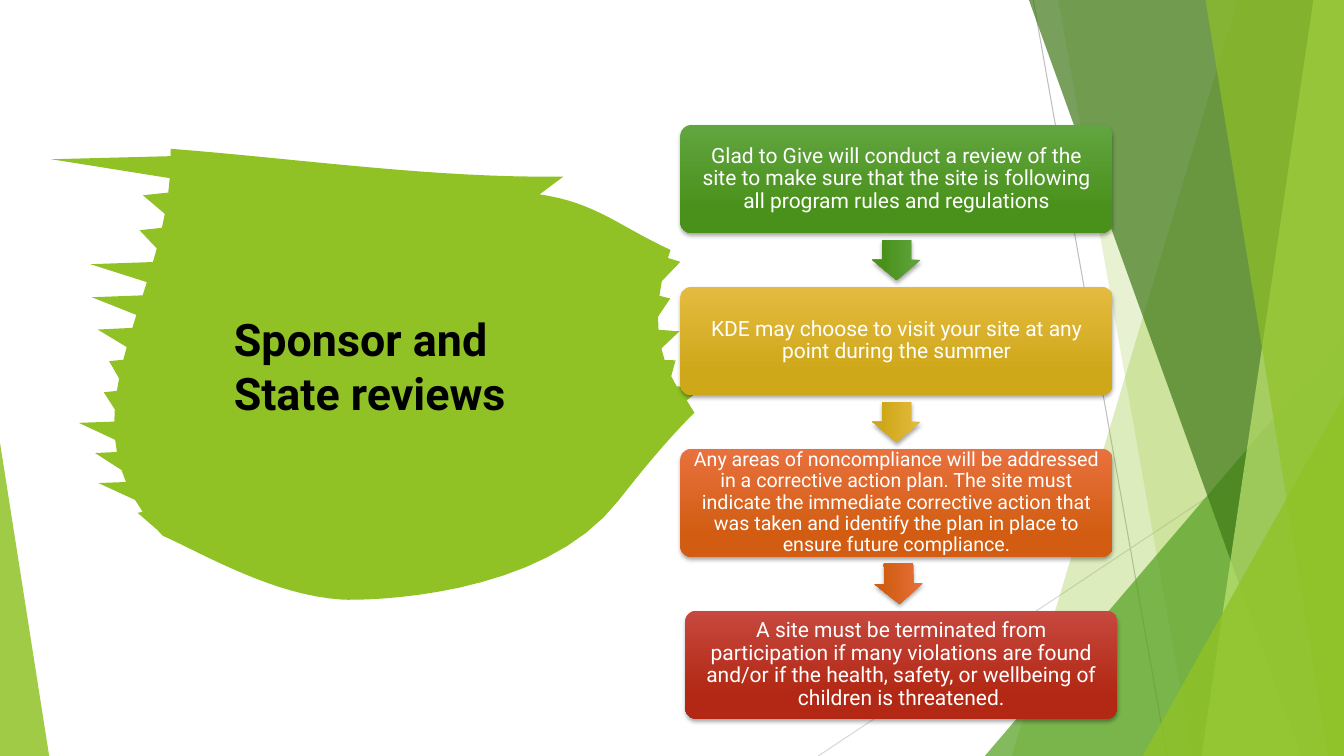
"""Build the slide on sponsor and state reviews."""
from dataclasses import dataclass
from typing import Any

import lxml.etree
import pptx
import pptx.dml.color
import pptx.enum.shapes
import pptx.enum.text
import pptx.oxml.ns
import pptx.util

Cm, Pt = pptx.util.Cm, pptx.util.Pt
RGB = pptx.dml.color.RGBColor
SHAPE = pptx.enum.shapes.MSO_SHAPE
ALIGN = pptx.enum.text.PP_ALIGN
MIDDLE = pptx.enum.text.MSO_ANCHOR.MIDDLE
qn = pptx.oxml.ns.qn
Point = tuple[float, float]

WHITE, BLACK = RGB(255, 255, 255), RGB(0, 0, 0)
LIME, PALE_LIME = RGB(0x90, 0xC2, 0x26), RGB(0xBF, 0xE4, 0x71)
GREEN, DARK_GREEN = RGB(0x54, 0xA0, 0x21), RGB(0x3F, 0x78, 0x18)
GREY, LIGHT_GREY = RGB(0xBF, 0xBF, 0xBF), RGB(0xD8, 0xD8, 0xD8)

WIDTH, HEIGHT = 33.87, 19.05
CARD_LEFT, CARD_TOP, CARD_W, CARD_H, PITCH = 17.15, 3.15, 10.89, 2.72, 4.08
ARROW_W, ARROW_H = 1.02, 1.22
MARGINS = {f"margin_{side}": Cm(0.23) for side in ("left", "right", "top", "bottom")}


@dataclass
class Ray:
    start: Point
    end: Point
    color: RGB


@dataclass
class Band:
    top_x: float
    bottom_x: float
    color: RGB
    opacity: int


@dataclass
class Wedge:
    left: float
    top: float
    width: float
    apex: int
    color: RGB
    opacity: int


@dataclass
class Edge:
    start: Point
    pull_out: Point
    pull_in: Point
    end: Point
    bristles: tuple[float, ...] = ()


@dataclass
class Step:
    text: str
    light: RGB
    dark: RGB
    size: int = 15
    shift: float = 0
    arrow_shift: float = 0
    turn: float = 90


RAYS = [Ray((26.04, 0), (29.41, HEIGHT), GREY), Ray((WIDTH, 10.24), (20.62, HEIGHT), LIGHT_GREY)]
BACKDROP = [
    Band(31.19, 25.5, LIME, 30),
    Band(26.67, 30.05, LIME, 20),
    Wedge(24.82, 8.46, 9.05, 1, GREEN, 72),
    Band(25.93, 32.79, DARK_GREEN, 70),
    Band(33.1, 30.28, PALE_LIME, 70),
    Band(30.38, 33.48, LIME, 65),
    Wedge(28.8, 9.98, 5.07, 1, LIME, 80),
    Wedge(0, 11.15, 1.24, 0, LIME, 85),
]
TOP = Edge((4.3, 3.75), (7.5, 4), (11, 4.5), (14.2, 4.45))
SHOULDER = Edge((13.6, 4.9), (15, 5.1), (15.6, 5.7), (16.9, 6.3))
RIGHT = Edge((16.9, 6.3), (16.3, 8), (16.6, 9.3), (17.4, 10.2), (0.4, 0.3, 0.5, 0.2, 0.6))
FLANK = Edge((17.5, 10.4), (16.9, 11), (16.3, 11.7), (15.6, 12.6))
BOTTOM = Edge((15.6, 12.6), (13.67, 15.11), (9.14, 15.14), (8.61, 15.11))
HEEL = Edge((8.61, 15.11), (6.9, 15), (5.2, 14), (4.1, 13.5))
LEFT = Edge((4.1, 13.5), (1.2, 10.5), (4.4, 7.5), (4.3, 3.75),
            (-0.3, -0.8, -0.6, -0.9, -0.3, -0.3, -0.8, -1.2, -1.5, -0.5, -0.6, -3))
BRUSH = [TOP, SHOULDER, RIGHT, FLANK, BOTTOM, HEEL, LEFT]
BRISTLE_RISE, SMOOTH_STEPS = 0.2, 16

STEPS = [
    Step("Glad to Give will conduct a review of the site to make sure that the site is "
         "following all program rules and regulations",
         RGB(0x61, 0xA5, 0x40), RGB(0x4A, 0x91, 0x1B)),
    Step("KDE may choose to visit your site at any point during the summer",
         RGB(0xE4, 0xBB, 0x40), RGB(0xCF, 0xA8, 0x1A)),
    Step("Any areas of noncompliance will be addressed in a corrective action plan. The site "
         "must indicate the immediate corrective action that was taken and identify the plan "
         "in place to ensure future compliance.",
         RGB(0xE8, 0x71, 0x3E), RGB(0xD2, 0x5D, 0x12), size=14, arrow_shift=0.06, turn=88.5),
    Step("A site must be terminated from participation if many violations are found and/or "
         "if the health, safety, or wellbeing of children is threatened.",
         RGB(0xC6, 0x48, 0x3E), RGB(0xB2, 0x28, 0x14), shift=0.12),
]


def set_attrs(obj: Any, values: dict[str, Any]) -> None:
    for name, value in values.items():
        setattr(obj, name, value)


def point_on(edge: Edge, t: float) -> Point:
    weights = ((1 - t) ** 3, 3 * t * (1 - t) ** 2, 3 * t * t * (1 - t), t ** 3)
    knots = (edge.start, edge.pull_out, edge.pull_in, edge.end)
    x, y = (sum(w * k[axis] for w, k in zip(weights, knots)) for axis in (0, 1))
    return x, y


def trace(edge: Edge) -> list[Point]:
    if not edge.bristles:
        return [point_on(edge, i / SMOOTH_STEPS) for i in range(SMOOTH_STEPS + 1)]
    points = []
    for i, reach in enumerate(edge.bristles):
        before, middle, after = (point_on(edge, (i + part) / len(edge.bristles))
                                 for part in (0.2, 0.5, 0.8))
        points += [before, (middle[0] + reach, middle[1] - BRISTLE_RISE), after]
    return points


def add_polygon(s: Any, points: list[Point], color: RGB, opacity: int = 100) -> Any:
    start, *rest = [(Cm(x), Cm(y)) for x, y in points]
    builder = s.shapes.build_freeform(*start)
    builder.add_line_segments(rest)
    sp = builder.convert_to_shape()
    paint(sp, color, opacity)
    return sp


def paint(sp: Any, color: RGB, opacity: int) -> None:
    sp.shadow.inherit = False
    sp.line.fill.background()
    sp.fill.solid()
    sp.fill.fore_color.rgb = color
    if opacity < 100:
        clr = sp.element.spPr.find(".//" + qn("a:srgbClr"))
        lxml.etree.SubElement(clr, qn("a:alpha"), val=str(opacity * 1000))


def add_ray(s: Any, ray: Ray) -> None:
    cxn = s.shapes.add_connector(pptx.enum.shapes.MSO_CONNECTOR.STRAIGHT,
                                 *map(Cm, ray.start + ray.end))
    cxn.line.color.rgb = ray.color
    cxn.line.width = Pt(0.75)
    lxml.etree.SubElement(cxn.element.spPr, qn("a:effectLst"))


def add_backdrop(s: Any, part: Band | Wedge) -> None:
    if isinstance(part, Band):
        corners = [(part.top_x, 0), (WIDTH, 0), (WIDTH, HEIGHT), (part.bottom_x, HEIGHT)]
        add_polygon(s, corners, part.color, part.opacity)
    else:
        box = (part.left, part.top, part.width, HEIGHT - part.top)
        sp = s.shapes.add_shape(SHAPE.ISOSCELES_TRIANGLE, *map(Cm, box))
        sp.adjustments[0] = part.apex
        paint(sp, part.color, part.opacity)


def add_glossy(s: Any, kind: Any, box: tuple[float, ...], step: Step) -> Any:
    sp = s.shapes.add_shape(kind, *map(Cm, box))
    sp.line.fill.background()
    sp.fill.gradient()
    sp.fill.gradient_angle = 270
    for stop, color, position in zip(sp.fill.gradient_stops, (step.light, step.dark), (0, 0.78)):
        stop.color.rgb = color
        stop.position = position
    sp.shadow.inherit = False
    shadow = lxml.etree.SubElement(
        sp.element.spPr.find(qn("a:effectLst")), qn("a:outerShdw"), blurRad=str(Pt(3)),
        dist=str(Pt(2)), dir="5400000", algn="ctr", rotWithShape="0")
    clr = lxml.etree.SubElement(shadow, qn("a:srgbClr"), val=str(BLACK))
    lxml.etree.SubElement(clr, qn("a:alpha"), val="35000")
    return sp


def write(tf: Any, text: str, para: dict[str, Any], font: dict[str, Any], color: RGB) -> None:
    set_attrs(tf, {"text": text, "word_wrap": True, "vertical_anchor": MIDDLE})
    p = tf.paragraphs[0]
    set_attrs(p, para)
    set_attrs(p.runs[0].font, {"name": "Roboto"} | font)
    p.runs[0].font.color.rgb = color


def add_step(s: Any, index: int, step: Step) -> None:
    top = CARD_TOP + index * PITCH
    sp = add_glossy(s, SHAPE.ROUNDED_RECTANGLE, (CARD_LEFT + step.shift, top, CARD_W, CARD_H), step)
    sp.adjustments[0] = 0.1
    set_attrs(sp.text_frame, MARGINS)
    write(sp.text_frame, step.text, {"alignment": ALIGN.CENTER, "line_spacing": 0.9},
          {"size": Pt(step.size)}, WHITE)
    if index < len(STEPS) - 1:
        x = CARD_LEFT + (CARD_W - ARROW_W) / 2 + step.arrow_shift
        y = top + (CARD_H + PITCH - ARROW_H) / 2
        arrow = add_glossy(s, SHAPE.RIGHT_ARROW, (x, y, ARROW_W, ARROW_H), step)
        arrow.rotation = step.turn
        arrow.adjustments[0] = 0.6


prs = pptx.Presentation()
set_attrs(prs, {"slide_width": Cm(WIDTH), "slide_height": Cm(HEIGHT)})
s = prs.slides.add_slide(prs.slide_layouts[5])
for ray in RAYS:
    add_ray(s, ray)
for part in BACKDROP:
    add_backdrop(s, part)
brush = add_polygon(s, [point for edge in BRUSH for point in trace(edge)], LIME)
title = s.shapes.title
set_attrs(title, {"left": Cm(5.64), "top": Cm(5.33), "width": Cm(7.72), "height": Cm(7.77)})
title.text_frame.auto_size = pptx.enum.text.MSO_AUTO_SIZE.NONE
write(title.text_frame, "Sponsor and State reviews", {"alignment": ALIGN.LEFT},
      {"size": Pt(32), "bold": True}, BLACK)
brush.element.addnext(title.element)
for index, step in enumerate(STEPS):
    add_step(s, index, step)
prs.save("out.pptx")
